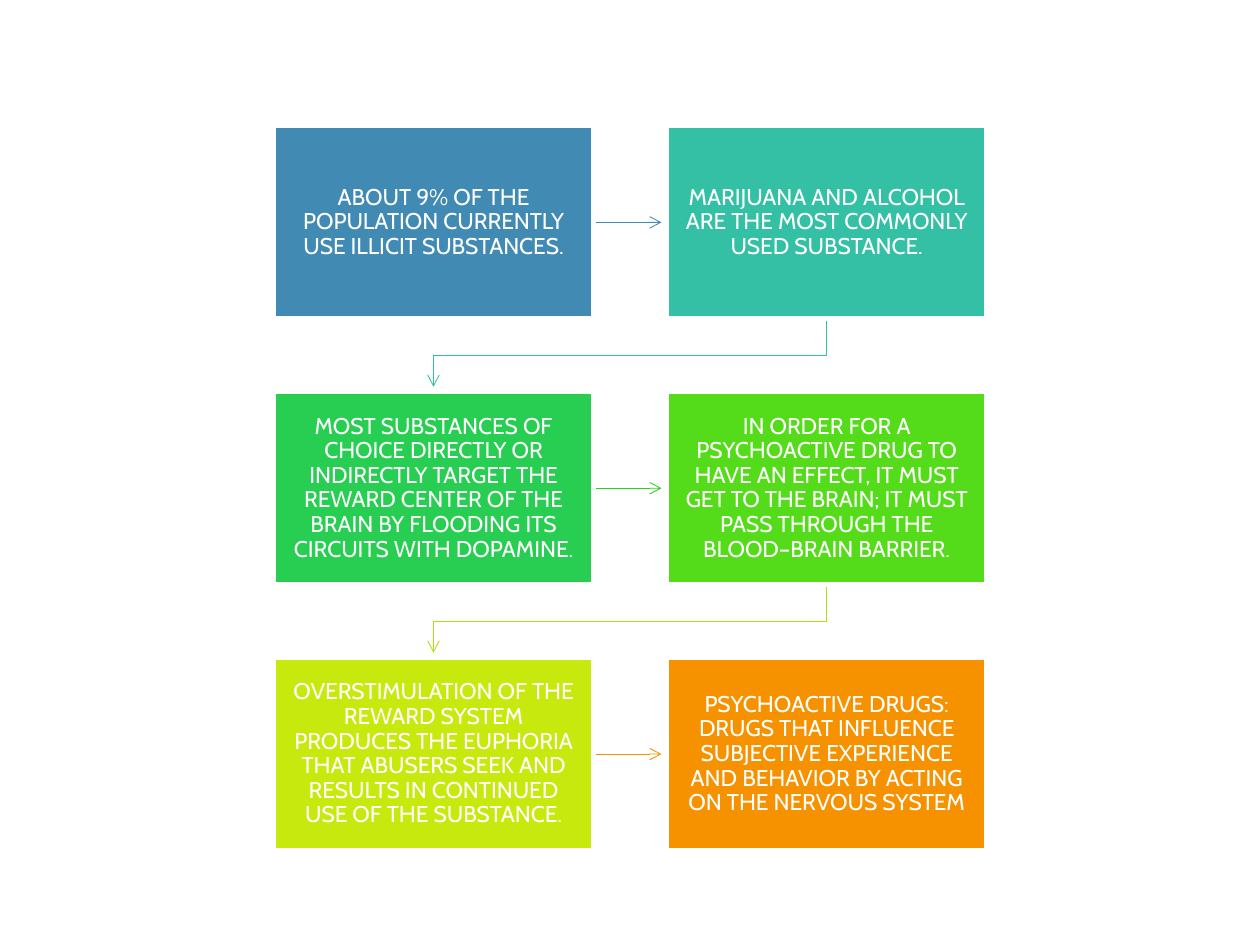
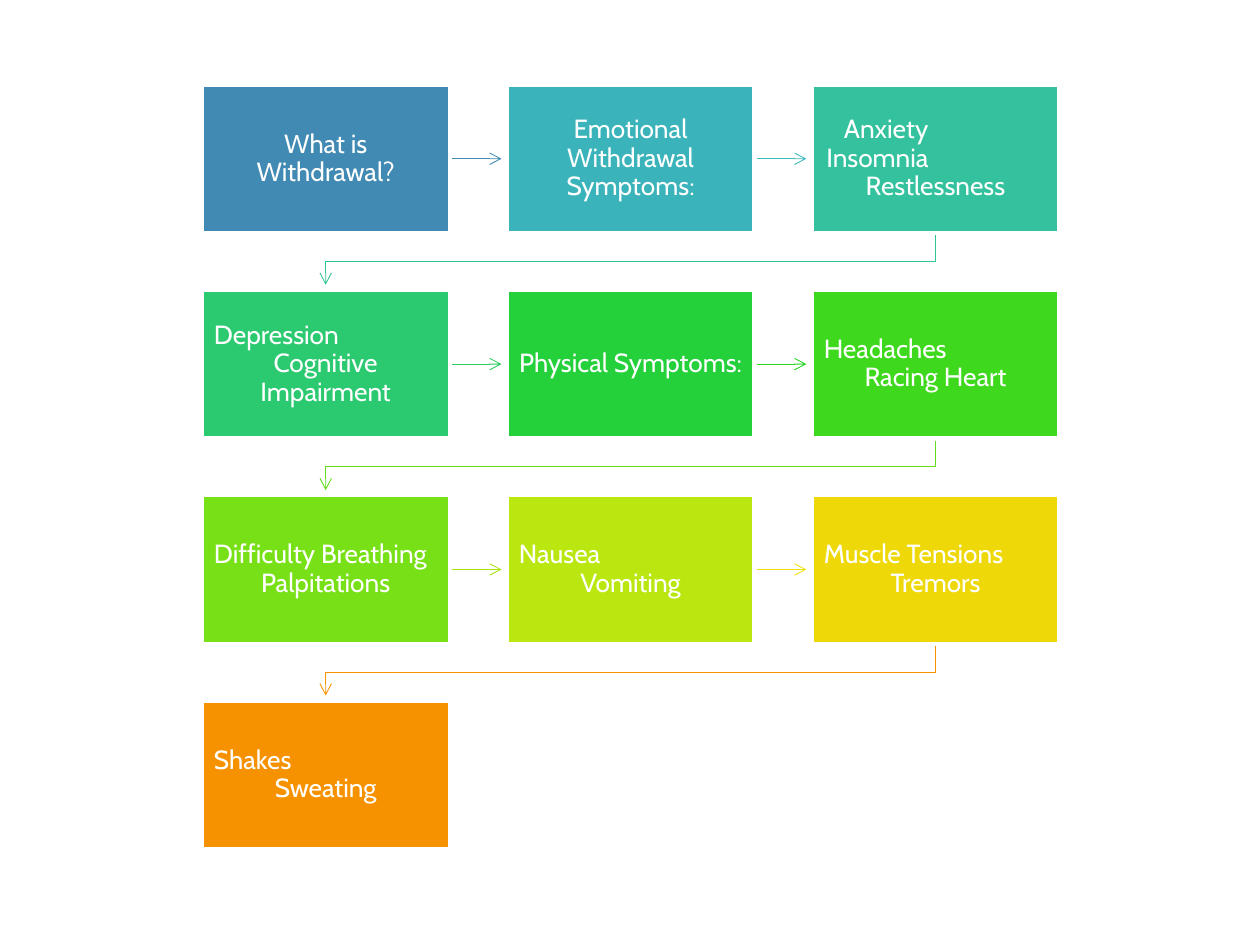
from dataclasses import dataclass

from lxml import etree
from pptx import Presentation
from pptx.dml.color import RGBColor
from pptx.enum.shapes import MSO_CONNECTOR, MSO_SHAPE
from pptx.enum.text import MSO_ANCHOR, PP_ALIGN
from pptx.oxml.ns import qn
from pptx.util import Inches, Pt

RECTANGLE = MSO_SHAPE.RECTANGLE
STRAIGHT = MSO_CONNECTOR.STRAIGHT
MIDDLE = MSO_ANCHOR.MIDDLE
LEFT, CENTER = PP_ALIGN.LEFT, PP_ALIGN.CENTER
RIGHT_SIDE = 3
FONT = "Cabin"
WHITE = "FFFFFF"
ARROW_CLEARANCE = 0.04
BLANK_LAYOUT = 6


@dataclass
class Grid:
    left: float
    top: float
    width: float
    height: float
    gap: float
    columns: int
    inset_x: float
    inset_y: float
    size: int

    def place(self, index):
        row, column = divmod(index, self.columns)
        return (self.left + column * (self.width + self.gap),
                self.top + row * (self.height + self.gap))


@dataclass
class Step:
    fill: str
    centred: str
    leads: tuple = ()


SUBSTANCE_GRID = Grid(2.17, 1, 2.54, 1.53, 0.58, 2, 0.12, 0.13, 13)
SUBSTANCE_STEPS = [
    Step("418AB3", "ABOUT 9% OF THE POPULATION CURRENTLY USE ILLICIT SUBSTANCES."),
    Step("34C0A5", "MARIJUANA AND ALCOHOL ARE THE MOST COMMONLY USED SUBSTANCE."),
    Step("27CE51", "MOST SUBSTANCES OF CHOICE DIRECTLY OR INDIRECTLY TARGET THE "
                   "REWARD CENTER OF THE BRAIN BY FLOODING ITS CIRCUITS WITH DOPAMINE."),
    Step("54DB1A", "IN ORDER FOR A PSYCHOACTIVE DRUG TO HAVE AN EFFECT, IT MUST GET TO "
                   "THE BRAIN; IT MUST PASS THROUGH THE BLOOD–BRAIN BARRIER."),
    Step("C8E90D", "OVERSTIMULATION OF THE REWARD SYSTEM PRODUCES THE EUPHORIA THAT "
                   "ABUSERS SEEK AND RESULTS IN CONTINUED USE OF THE SUBSTANCE."),
    Step("F69200", "PSYCHOACTIVE DRUGS: DRUGS THAT INFLUENCE SUBJECTIVE EXPERIENCE "
                   "AND BEHAVIOR BY ACTING ON THE NERVOUS SYSTEM"),
]
SUBSTANCE_ARROWS = ["418AB3", "31C493", "25D421", "A8E510", "F69200"]

WITHDRAWAL_GRID = Grid(1.6, 0.67, 1.97, 1.18, 0.45, 3, 0.1, 0.1, 15)
WITHDRAWAL_STEPS = [
    Step("418AB3", "What is Withdrawal?"),
    Step("3AB4BA", "Emotional Withdrawal Symptoms:"),
    Step("33C29D", "Restlessness", (("Anxiety", 0.16), ("Insomnia", 0.02))),
    Step("2BC970", "Cognitive Impairment", (("Depression", 0),)),
    Step("24D13B", "Physical Symptoms:"),
    Step("3ED81D", "Racing Heart", (("Headaches", 0),)),
    Step("78E016", "Palpitations", (("Difficulty Breathing", 0),)),
    Step("BAE70F", "Vomiting", (("Nausea", 0),)),
    Step("EED807", "Tremors", (("Muscle Tensions", 0),)),
    Step("F69200", "Sweating", (("Shakes", 0),)),
]
WITHDRAWAL_ARROWS = ["418AB3", "39BABB", "31C493", "29CC5D", "25D421",
                     "61DD19", "A8E510", "EEE008", "F69200"]


def color(value):
    return RGBColor.from_string(value)


def style_arrow(arrow, line_color):
    arrow.line.color.rgb = color(line_color)
    arrow.line.width = Pt(0.5)
    properties = arrow.element.find(qn("p:spPr"))
    etree.SubElement(properties.find(qn("a:ln")), qn("a:tailEnd"), type="arrow")
    etree.SubElement(properties, qn("a:effectLst"))


def add_row_arrow(page, grid, index, line_color):
    left, top = grid.place(index)
    start = left + grid.width
    middle = Inches(top + grid.height / 2)
    arrow = page.shapes.add_connector(
        STRAIGHT, Inches(start), middle,
        Inches(start + grid.gap - ARROW_CLEARANCE), middle)
    style_arrow(arrow, line_color)
    return arrow


def add_return_arrow(page, grid, index, line_color):
    left, top = grid.place(index)
    start_x = Inches(left + grid.width / 2)
    end_x = Inches(grid.left + grid.width / 2)
    bottom = top + grid.height
    turn = Inches(bottom + grid.gap / 2)
    builder = page.shapes.build_freeform(start_x, Inches(bottom))
    builder.add_line_segments(
        [(start_x, turn), (end_x, turn),
         (end_x, Inches(bottom + grid.gap - ARROW_CLEARANCE))], close=False)
    arrow = builder.convert_to_shape()
    arrow.fill.background()
    style_arrow(arrow, line_color)


def write_line(para, text, size, align, indent=0):
    para.text = text
    para.alignment = align
    para.line_spacing = 0.9
    para.font.name = FONT
    para.font.size = Pt(size)
    para.font.color.rgb = color(WHITE)
    if indent:
        para._p.get_or_add_pPr().set("marL", str(Inches(indent)))


def add_step(page, grid, index, step):
    left, top = grid.place(index)
    box = page.shapes.add_shape(RECTANGLE, Inches(left), Inches(top),
                                Inches(grid.width), Inches(grid.height))
    box.shadow.inherit = False
    box.fill.solid()
    box.fill.fore_color.rgb = color(step.fill)
    box.line.color.rgb = color(WHITE)
    box.line.width = Pt(2.5)
    frame = box.text_frame
    frame.word_wrap = True
    frame.vertical_anchor = MIDDLE
    frame.margin_left = frame.margin_right = Inches(grid.inset_x)
    frame.margin_top = frame.margin_bottom = Inches(grid.inset_y)
    para = frame.paragraphs[0]
    for text, indent in step.leads:
        write_line(para, text, grid.size, LEFT, indent)
        para = frame.add_paragraph()
    write_line(para, step.centred, grid.size, CENTER)
    return box


def add_flow_slide(deck, grid, steps, arrow_colors):
    page = deck.slides.add_slide(deck.slide_layouts[BLANK_LAYOUT])
    row_arrows = {}
    for index, line_color in enumerate(arrow_colors):
        if (index + 1) % grid.columns:
            row_arrows[index] = add_row_arrow(page, grid, index, line_color)
        else:
            add_return_arrow(page, grid, index, line_color)
    for index, step in enumerate(steps):
        box = add_step(page, grid, index, step)
        if index in row_arrows:
            row_arrows[index].begin_connect(box, RIGHT_SIDE)


def main():
    deck = Presentation()
    deck.slide_width = Inches(10)
    deck.slide_height = Inches(7.5)
    add_flow_slide(deck, SUBSTANCE_GRID, SUBSTANCE_STEPS, SUBSTANCE_ARROWS)
    add_flow_slide(deck, WITHDRAWAL_GRID, WITHDRAWAL_STEPS, WITHDRAWAL_ARROWS)
    deck.save("out.pptx")


if __name__ == "__main__":
    main()
